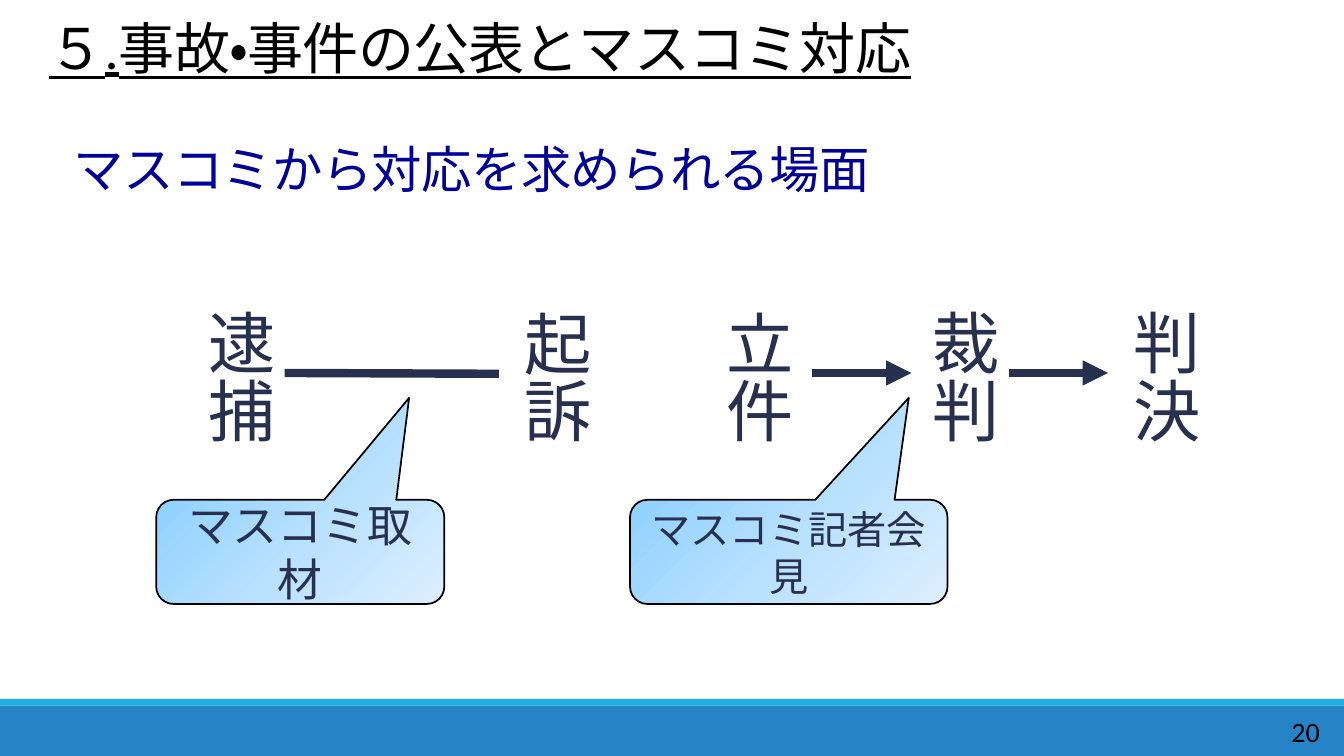
from copy import deepcopy
from dataclasses import dataclass

from lxml import etree
from pptx import Presentation, util as u
from pptx.dml import color
from pptx.enum import lang, shapes, text
from pptx.oxml import ns

COLORS = {
    "ink": "27304E",
    "black": "000000",
    "subtitle": "000099",
    "footer": "2683C6",
    "accent": "1CADE4",
    "sky_dark": "8FD1FF",
    "sky_mid": "BAE1FF",
    "sky_light": "DDEFFF",
}
COLUMNS, ROWS = 16, 9
STAGE_WIDTH, STAGE_HEIGHT = 1.21, 1.74
FLOW_ROW = 4.44


@dataclass(frozen=True)
class Area:
    column: float
    row: float
    columns: float
    rows: float


@dataclass(frozen=True)
class Stage:
    label: str
    column: float
    row: float = 3.57


@dataclass(frozen=True)
class Callout:
    label: str
    area: Area
    size: int


BARS = [("footer", Area(0, 8.4, 16, 0.6)), ("accent", Area(0, 8.32, 16, 0.08))]
STAGES = [
    Stage("逮捕", 2.18),
    Stage("起訴", 5.94, 3.58),
    Stage("立件", 8.35, 3.58),
    Stage("裁判", 10.8),
    Stage("判決", 13.19),
]
CALLOUTS = [
    Callout("マスコミ取材", Area(1.86, 5.95, 3.43, 1.24), 32),
    Callout("マスコミ記者会見", Area(7.5, 5.95, 3.78, 1.24), 28),
]

prs = Presentation()
prs.slide_width, prs.slide_height = u.Inches(13.33), u.Inches(7.5)
slide = prs.slides.add_slide(prs.slide_layouts[5])


def across(columns: float) -> int:
    return round(prs.slide_width * columns / COLUMNS)


def down(rows: float) -> int:
    return round(prs.slide_height * rows / ROWS)


def box(area: Area) -> tuple[int, int, int, int]:
    return across(area.column), down(area.row), across(area.columns), down(area.rows)


def rgb(name: str) -> color.RGBColor:
    return color.RGBColor.from_string(COLORS[name])


def write(shape, words: str, size: int, ink: str, align=text.PP_ALIGN.LEFT,
          anchor=text.MSO_ANCHOR.TOP):
    frame = shape.text_frame
    frame.word_wrap = True
    frame.auto_size = text.MSO_AUTO_SIZE.NONE
    frame.vertical_anchor = anchor
    paragraph = frame.paragraphs[0]
    paragraph.alignment = align
    run = paragraph.add_run()
    run.text = words
    run.font.name = "Calibri"
    run.font.size = u.Pt(size)
    run.font.color.rgb = rgb(ink)
    run.font.language_id = lang.MSO_LANGUAGE_ID.JAPANESE
    return run


def write_heading(shape, words: str, size: int, ink: str):
    run = write(shape, words, size, ink, anchor=text.MSO_ANCHOR.BOTTOM)
    shape.text_frame.paragraphs[0].line_spacing = 0.85
    run.font._element.set("spc", "-50")
    return run


def add_bar(fill: str, area: Area) -> None:
    bar = slide.shapes.add_shape(shapes.MSO_SHAPE.RECTANGLE, *box(area))
    bar.shadow.inherit = False
    bar.fill.solid()
    bar.fill.fore_color.rgb = rgb(fill)
    bar.line.fill.background()


def add_stage(stage: Stage):
    area = Area(stage.column, stage.row, STAGE_WIDTH, STAGE_HEIGHT)
    label = slide.shapes.add_textbox(*box(area))
    write(label, stage.label, 48, "ink")
    label.text_frame.word_wrap = False
    label.text_frame.auto_size = text.MSO_AUTO_SIZE.SHAPE_TO_FIT_TEXT
    label.text_frame._txBody.bodyPr.set("vert", "eaVert")
    return label


def add_link(start: float, end: float, arrow: bool):
    link = slide.shapes.add_connector(
        shapes.MSO_CONNECTOR.STRAIGHT,
        across(start), down(FLOW_ROW), across(end), down(FLOW_ROW))
    link.line.color.rgb = rgb("ink")
    link.line.width = u.Pt(6)
    if arrow:
        head = etree.SubElement(link.line._get_or_add_ln(), ns.qn("a:tailEnd"))
        head.set("type", "triangle")
    etree.SubElement(link._element.spPr, ns.qn("a:effectLst"))
    return link


def join(before, after, arrow: bool) -> None:
    link = add_link(0, 1, arrow)
    link.begin_connect(before, 3)
    link.end_connect(after, 1)


def add_callout(callout: Callout) -> None:
    bubble = slide.shapes.add_shape(
        shapes.MSO_SHAPE.ROUNDED_RECTANGULAR_CALLOUT, *box(callout.area))
    bubble.shadow.inherit = False
    for index, value in enumerate((0.378, -1.479, 0.167)):
        bubble.adjustments[index] = value
    bubble.fill.gradient()
    bubble.fill.gradient_angle = 315
    first = bubble._element.spPr.find(".//" + ns.qn("a:gs"))
    first.addnext(deepcopy(first))
    sky = ("sky_dark", "sky_mid", "sky_light")
    for index, (stop, shade) in enumerate(zip(bubble.fill.gradient_stops, sky)):
        stop.position = index / 2
        stop.color.rgb = rgb(shade)
    bubble.line.color.rgb = rgb("black")
    bubble.line.width = u.Pt(1.25)
    write(bubble, callout.label, callout.size, "ink",
          text.PP_ALIGN.CENTER, text.MSO_ANCHOR.MIDDLE)


def main() -> None:
    for fill, area in BARS:
        add_bar(fill, area)

    title = slide.shapes.title
    title.left, title.top, title.width, title.height = box(Area(0.46, 0.07, 14.84, 0.95))
    heading = write_heading(title, "５.事故・事件の公表とマスコミ対応", 40, "black")
    heading.font.underline = True

    subtitle = slide.shapes.add_textbox(*box(Area(0.76, 1.48, 10.09, 0.95)))
    write_heading(subtitle, "マスコミから対応を求められる場面", 36, "subtitle")

    arrest, indictment, filing, trial, verdict = map(add_stage, STAGES)
    join(arrest, indictment, arrow=False)
    add_link(9.67, 10.85, arrow=True)
    join(trial, verdict, arrow=True)

    for callout in CALLOUTS:
        add_callout(callout)

    page_number = slide.shapes.add_textbox(*box(Area(14.11, 8.47, 1.72, 0.48)))
    write(page_number, "20", 20, "black", text.PP_ALIGN.RIGHT, text.MSO_ANCHOR.MIDDLE)
    prs.save("out.pptx")


if __name__ == "__main__":
    main()
